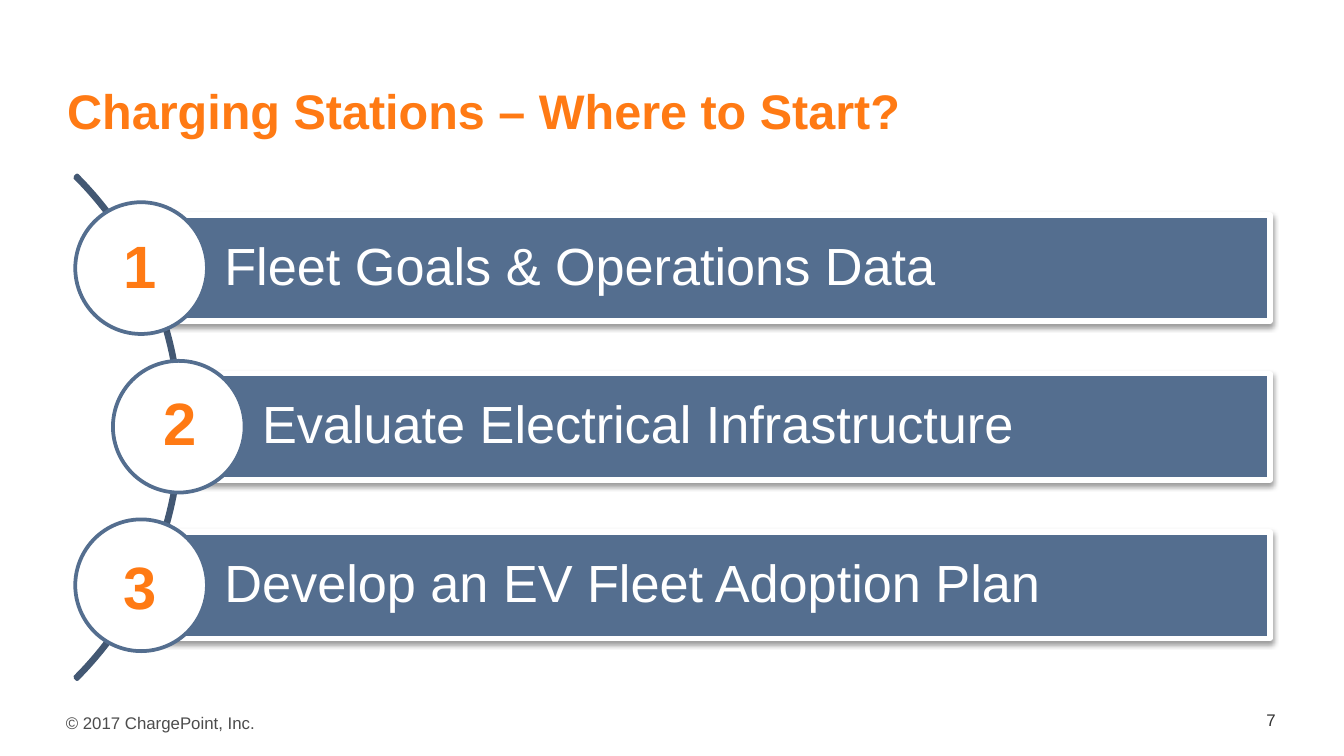
"""Builds a slide listing three numbered steps along an arc."""
import pptx
import pptx.dml.color
import pptx.enum.shapes
import pptx.enum.text
import pptx.oxml
import pptx.oxml.ns
import pptx.util

Inches = pptx.util.Inches
Pt = pptx.util.Pt
SHAPE = pptx.enum.shapes.MSO_SHAPE
ALIGN = pptx.enum.text.PP_ALIGN
ANCHOR = pptx.enum.text.MSO_ANCHOR

COLORS = {
    "orange": "FF7A14",
    "steel": "546E8F",
    "arc": "435873",
    "white": "FFFFFF",
    "black": "000000",
    "footer": "4C4C4C",
    "number": "323232",
}
STEPS = [
    ("Fleet Goals & Operations Data", 1.05, (0.82, 1.65)),
    ("Evaluate Electrical Infrastructure", 1.33, (1.12, 2.82)),
    ("Develop an EV Fleet Adoption Plan", 1.05, (0.82, 4.04)),
]
FIRST_TOP, STEP_GAP = 1.6, 1.18
BAR_RIGHT, BAR_HEIGHT = 9.45, 0.79
CIRCLE = 0.98


def rgb(name):
    return pptx.dml.color.RGBColor.from_string(COLORS[name])


def write(sp, text, size, color, bold=False, align=ALIGN.LEFT, anchor=ANCHOR.TOP,
          insets=(0.1, 0.05, 0.1, 0.05), wrap=True, spacing=None):
    tf = sp.text_frame
    tf.word_wrap = wrap
    tf.vertical_anchor = anchor
    tf.margin_left, tf.margin_top, tf.margin_right, tf.margin_bottom = map(Inches, insets)
    p = tf.paragraphs[0]
    p.alignment = align
    p.line_spacing = spacing
    r = p.add_run()
    r.text = text
    r.font.name = "Arial"
    r.font.size = Pt(size)
    r.font.bold = bold
    r.font.color.rgb = rgb(color)


def add_text(slide, box, text, size, color, **fmt):
    sp = slide.shapes.add_textbox(*map(Inches, box))
    write(sp, text, size, color, **fmt)


def add_shape(slide, kind, box, line, width, fill=None):
    sp = slide.shapes.add_shape(kind, *map(Inches, box))
    sp.shadow.inherit = False
    if fill:
        sp.fill.solid()
        sp.fill.fore_color.rgb = rgb(fill)
    else:
        sp.fill.background()
    sp.line.color.rgb = rgb(line)
    sp.line.width = Pt(width)
    return sp


def add_shadow(sp):
    effects = sp._element.spPr.find(pptx.oxml.ns.qn("a:effectLst"))
    effects.append(pptx.oxml.parse_xml(
        f'<a:outerShdw {pptx.oxml.ns.nsdecls("a")} blurRad="{Pt(3.1)}" dist="{Pt(1.6)}" '
        f'dir="5400000" rotWithShape="0"><a:srgbClr val="{COLORS["black"]}">'
        '<a:alpha val="38000"/></a:srgbClr></a:outerShdw>'))


def add_arc(slide):
    sp = add_shape(slide, SHAPE.BLOCK_ARC, (-3.95, 0.53, 5.3, 5.3), "arc", 2)
    for i, value in enumerate((189, 27, 0.004)):
        sp.adjustments[i] = value


def add_step(slide, text, left, top):
    bar = add_shape(slide, SHAPE.RECTANGLE, (left, top, BAR_RIGHT - left, BAR_HEIGHT),
                    "white", 3, "steel")
    add_shadow(bar)
    write(bar, text, 28, "white", anchor=ANCHOR.MIDDLE,
          insets=(0.62, 0.08, 0.08, 0.08), spacing=0.9)
    circle_top = top + (BAR_HEIGHT - CIRCLE) / 2
    add_shape(slide, SHAPE.OVAL, (left - CIRCLE / 2, circle_top, CIRCLE, CIRCLE),
              "steel", 2, "white")


def add_number(slide, number, left, top):
    add_text(slide, (left, top, 0.45, 0.64), str(number), 32, "orange",
             bold=True, wrap=False)


def main():
    prs = pptx.Presentation()
    prs.slide_width = Inches(10)
    prs.slide_height = prs.slide_width * 9 // 16
    slide = prs.slides.add_slide(prs.slide_layouts[6])
    add_text(slide, (0.49, 5.25, 1.54, 0.25), "© 2017 ChargePoint, Inc.", 9, "footer",
             insets=(0, 0.05, 0.1, 0.05), wrap=False)
    add_text(slide, (0.5, 0.6, 9, 0.44), "Charging Stations – Where to Start?", 26,
             "orange", bold=True, insets=(0, 0, 0, 0))
    add_arc(slide)
    for i, (text, left, _) in enumerate(STEPS):
        add_step(slide, text, left, FIRST_TOP + i * STEP_GAP)
    add_text(slide, (8.42, 5.23, 1.17, 0.25), "7", 9, "number", align=ALIGN.RIGHT,
             anchor=ANCHOR.MIDDLE)
    for number, (_, _, corner) in enumerate(STEPS, start=1):
        add_number(slide, number, *corner)
    prs.save("out.pptx")


if __name__ == "__main__":
    main()
